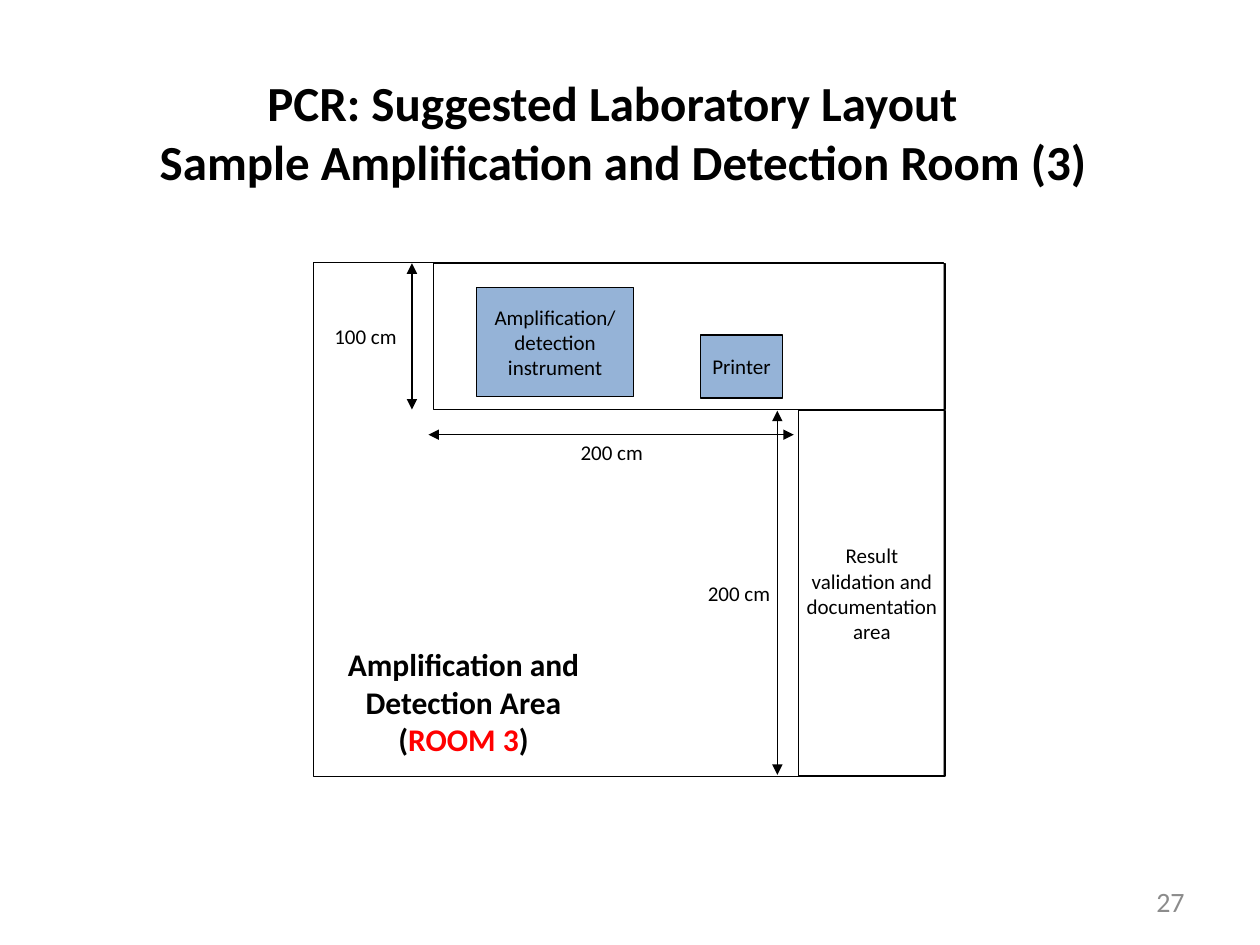
from lxml import etree
from pptx import Presentation
from pptx.dml.color import RGBColor
from pptx.enum.shapes import MSO_CONNECTOR, MSO_SHAPE
from pptx.enum.text import MSO_ANCHOR, PP_ALIGN
from pptx.oxml.ns import qn
from pptx.util import Pt

RECT = MSO_SHAPE.RECTANGLE
STRAIGHT = MSO_CONNECTOR.STRAIGHT
TOP, MIDDLE = MSO_ANCHOR.TOP, MSO_ANCHOR.MIDDLE
CENTER, RIGHT = PP_ALIGN.CENTER, PP_ALIGN.RIGHT
COLORS = {"black": "000000", "white": "FFFFFF", "blue": "4F81BD",
          "red": "FF0000", "gray": "8C8C8C"}


def color(name):
    return RGBColor.from_string(COLORS[name])


def write(sp, paragraphs, size=12, bold=False, tint="black", align=CENTER,
          anchor=MIDDLE, inset=(0, 0), wrap=True):
    tf = sp.text_frame
    x, y = map(Pt, inset)
    frame = {"word_wrap": wrap, "vertical_anchor": anchor, "margin_left": x,
             "margin_right": x, "margin_top": y, "margin_bottom": y}
    for name, value in frame.items():
        setattr(tf, name, value)
    for i, runs in enumerate(paragraphs):
        p = tf.add_paragraph() if i else tf.paragraphs[0]
        p.alignment = align
        for text, run_tint in runs:
            r = p.add_run()
            r.text = text
            font = {"name": "Calibri", "size": Pt(size), "bold": bold}
            for name, value in font.items():
                setattr(r.font, name, value)
            r.font.color.rgb = color(run_tint or tint)


prs = Presentation()
prs.slide_width, prs.slide_height = Pt(720), Pt(540)
slide = prs.slides.add_slide(prs.slide_layouts[6])
shapes = slide.shapes

rects = [
    ((179.3, 149.8, 360, 293.8), None, None, 0),
    ((247.7, 150.5, 292.3, 83.5), "white", None, 0),
    ((456.5, 234.7, 83.5, 208.8), "white",
     "Result validation and documentation area", 3.6),
    ((272.2, 164.2, 90, 62.6), "blue", "Amplification/ detection instrument", 0),
    ((400.3, 191.5, 46.8, 36), "blue", "Printer", 0),
]
for box, fill, text, inset in rects:
    sp = shapes.add_shape(RECT, *map(Pt, box))
    sp.shadow.inherit = False
    sp.line.color.rgb = color("black")
    sp.line.width = Pt(0.75)
    if fill:
        sp.fill.solid()
        sp.fill.fore_color.rgb = color(fill)
        srgb = sp.fill._xPr.find(qn("a:solidFill")).find(qn("a:srgbClr"))
        etree.SubElement(srgb, qn("a:alpha")).set("val", "60000")
    else:
        sp.fill.background()
    if text:
        write(sp, [[(text, None)]], inset=(inset, 0))

arrows = [
    (235.4, 150.5, 235.4, 234),
    (444.2, 234.7, 444.2, 442.8),
    (244.8, 248.4, 453.6, 248.4),
]
for ends in arrows:
    cx = shapes.add_connector(STRAIGHT, *map(Pt, ends))
    cx.line.color.rgb = color("black")
    cx.line.width = Pt(0.75)
    ln = cx.line._get_or_add_ln()
    for end in ("a:headEnd", "a:tailEnd"):
        etree.SubElement(ln, qn(end)).set("type", "triangle")
    etree.SubElement(cx._element.spPr, qn("a:effectLst"))

padded = (7.2, 3.6)
labels = [
    ((28.8, 36, 642.2, 77.8),
     [[("PCR: Suggested Laboratory Layout", None)],
      [("Sample Amplification and Detection Room (3)", None)]],
     {"size": 28, "bold": True, "inset": padded}),
    ((177.8, 365, 174.2, 43.2),
     [[("Amplification and Detection Area", None)],
      [("(", None), ("ROOM 3", "red"), (")", None)]],
     {"size": 18, "bold": True, "anchor": TOP, "inset": padded}),
    ((175, 175.7, 67.7, 33.1), [[("100 cm", None)]], {}),
    ((396.7, 328.3, 51.1, 20.9), [[("200 cm", None)]],
     {"anchor": TOP, "inset": padded, "wrap": False}),
    ((324.7, 245.5, 49.7, 25.9), [[("200 cm", None)]], {"wrap": False}),
    ((516.2, 500.4, 167.8, 28.8), [[("27", None)]],
     {"size": 16, "tint": "gray", "align": RIGHT, "inset": padded}),
]
for box, paragraphs, style in labels:
    sp = shapes.add_textbox(*map(Pt, box))
    write(sp, paragraphs, **style)
    if style.get("size") == 28:
        p = sp.text_frame.paragraphs[1]
        p._p.get_or_add_pPr().set("marL", str(Pt(12)))

prs.save("out.pptx")
